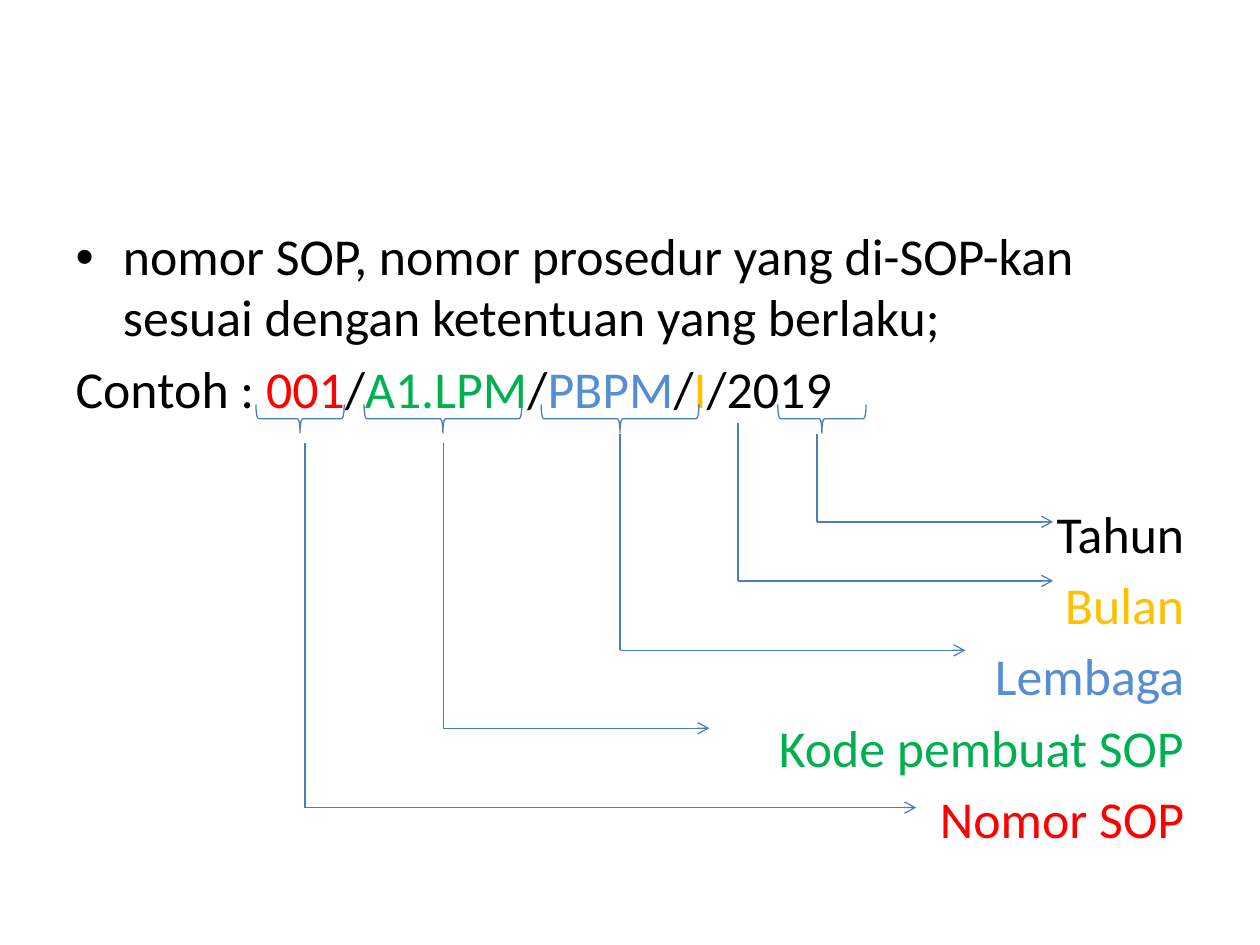
from lxml.etree import SubElement as Sub
from pptx import Presentation
from pptx.dml.color import RGBColor
from pptx.enum.shapes import MSO_CONNECTOR as Link, MSO_SHAPE as Shape
from pptx.enum.text import MSO_AUTO_SIZE as Fit, PP_ALIGN as Align
from pptx.oxml.ns import qn
from pptx.util import Cm, Pt

BLACK = RGBColor(0x00, 0x00, 0x00)
RED = RGBColor(0xFF, 0x00, 0x00)
GREEN = RGBColor(0x00, 0xB0, 0x50)
BLUE = RGBColor(0x55, 0x8E, 0xD5)
GOLD = RGBColor(0xFF, 0xC0, 0x00)
LINE = RGBColor(0x4B, 0x7E, 0xBC)


def add_line(x1, y1, x2, y2, arrow=False):
    line = slide.shapes.add_connector(
        Link.STRAIGHT, Cm(x1), Cm(y1), Cm(x2), Cm(y2))
    line.line.color.rgb = LINE
    line.line.width = Pt(0.75)
    props = line._element.spPr
    if arrow:
        Sub(props.find(qn("a:ln")), qn("a:tailEnd"), type="arrow")
    Sub(props, qn("a:effectLst"))


def add_para(text, color, align, gap):
    para = frame.add_paragraph() if frame.text else frame.paragraphs[0]
    para.alignment = align
    para.space_before = Pt(gap)
    para.line_spacing = 0.98
    para.font.name = "Calibri"
    para.font.size = Pt(29.6)
    para.font.color.rgb = color
    if text:
        para.add_run().text = text
    return para


deck = Presentation()
deck.slide_width, deck.slide_height = Cm(25.4), Cm(19.05)
slide = deck.slides.add_slide(deck.slide_layouts[1])
title = slide.shapes.title._element
title.getparent().remove(title)

# Body text
body = slide.placeholders[1]
body.left, body.top = Cm(1.27), Cm(4.45)
body.width, body.height = Cm(22.86), Cm(12.57)
frame = body.text_frame
frame.auto_size = Fit.NONE

add_para("nomor SOP, nomor prosedur yang di-SOP-kan sesuai dengan "
         "ketentuan yang berlaku;", BLACK, Align.LEFT, 6)

code = add_para("", BLACK, Align.LEFT, 6)
parts = [("Contoh : ", BLACK), ("001", RED), ("/", BLACK),
         ("A1.LPM", GREEN), ("/", BLACK), ("PBPM", BLUE), ("/", BLACK),
         ("I", GOLD), ("/2019", BLACK)]
for text, color in parts:
    run = code.add_run()
    run.text = text
    run.font.color.rgb = color

labels = [("Tahun", BLACK, 48), ("Bulan", GOLD, 6), ("Lembaga", BLUE, 6),
          ("Kode pembuat SOP", GREEN, 6), ("Nomor SOP", RED, 6)]
for text, color, gap in labels:
    add_para(text, color, Align.RIGHT, gap)

for para in frame.paragraphs[1:]:
    Sub(para._p.get_or_add_pPr(), qn("a:buNone"))
    # The bullet mark must stand before the default run properties
    props = para._p.pPr
    props.append(props.find(qn("a:defRPr")))

# Braces under the parts of the code: centre and span
depth, mid = 0.58, 8.44
for x, span in [(6.05, 1.78), (8.93, 3.18), (12.5, 3.18), (16.57, 1.78)]:
    brace = slide.shapes.add_shape(
        Shape.LEFT_BRACE, Cm(x - depth / 2), Cm(mid - span / 2),
        Cm(depth), Cm(span))
    brace.rotation = 270
    brace.shadow.inherit = False
    brace.fill.background()
    brace.line.color.rgb = LINE
    brace.line.width = Pt(0.75)

# Each path goes down from the code, then right to its label
paths = [(6.15, 8.94, 16.28, 18.47), (8.94, 8.94, 14.68, 14.3),
         (12.5, 8.74, 13.11, 19.46), (14.88, 8.53, 11.71, 21.23),
         (16.47, 8.74, 10.52, 21.23)]
for x, top, low, end in paths:
    add_line(x, top, x, low)
    add_line(x, low, end, low, arrow=True)

deck.save("out.pptx")
